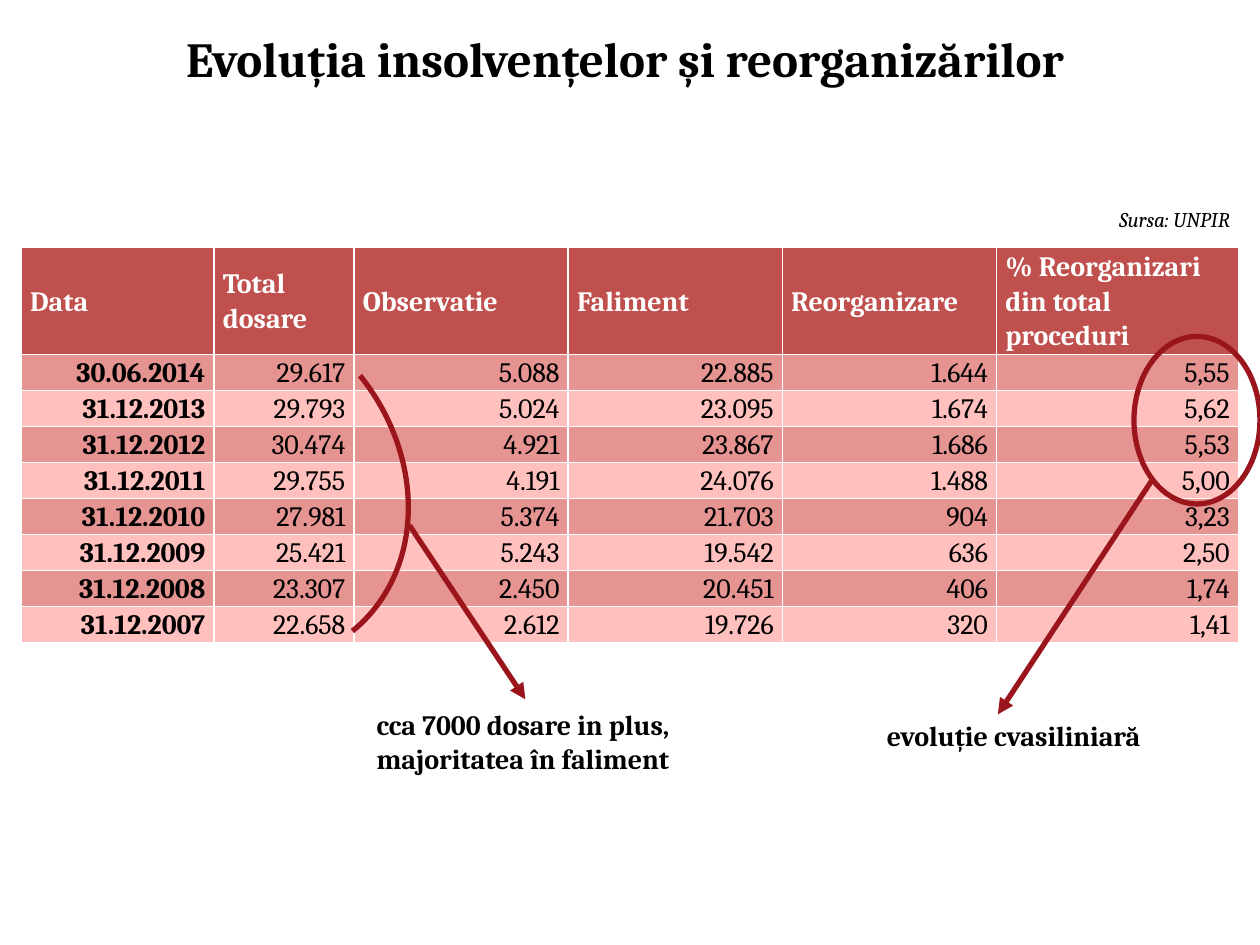
import pptx
import pptx.dml.color
import pptx.enum.shapes
import pptx.enum.text
import pptx.oxml
import pptx.oxml.ns
import pptx.util

COLORS = {
    "text": "000000",
    "white": "FFFFFF",
    "header": "C0504D",
    "dark row": "E59491",
    "light row": "FFC0BE",
    "mark": "9B151C",
}
ALIGN = pptx.enum.text.PP_ALIGN
SHAPE = pptx.enum.shapes.MSO_SHAPE
RGB = {name: pptx.dml.color.RGBColor.from_string(value) for name, value in COLORS.items()}

deck = pptx.Presentation()
deck.slide_width = pptx.util.Inches(10)
deck.slide_height = pptx.util.Inches(7.5)
page = deck.slides.add_slide(deck.slide_layouts[5])

# The page is a grid of 100 columns by 75 rows.
COLUMN = deck.slide_width // 100
ROW = deck.slide_height // 75


def grid(left, top, width, height):
    return [round(length) for length in (left * COLUMN, top * ROW, width * COLUMN, height * ROW)]


def write(frame, text, size, color="text", align=ALIGN.LEFT, bold=True, italic=False):
    frame.text = text
    frame.word_wrap = True
    for para in frame.paragraphs:
        para.alignment = align
        for span in para.runs:
            span.font.name = "Cambria"
            span.font.size = pptx.util.Pt(size)
            span.font.bold = bold
            span.font.italic = italic
            span.font.color.rgb = RGB[color]


# Title and source
title = page.shapes.title
title.left, title.top, title.width, title.height = grid(1.7, 1.8, 95.8, 5.7)
write(title.text_frame, "Evoluția insolvențelor și reorganizărilor", 28, align=ALIGN.CENTER)
title.text_frame.auto_size = pptx.enum.text.MSO_AUTO_SIZE.NONE
title.text_frame.vertical_anchor = pptx.enum.text.MSO_ANCHOR.TOP

source = page.shapes.add_textbox(*grid(84.4, 15.9, 14.2, 3))
write(source.text_frame, "Sursa: UNPIR", 12, align=ALIGN.RIGHT, bold=False, italic=True)

# Table
records = [
    ["Data", "Total dosare", "Observatie", "Faliment", "Reorganizare",
     "% Reorganizari din total proceduri"],
    ["30.06.2014", "29.617", "5.088", "22.885", "1.644", "5,55"],
    ["31.12.2013", "29.793", "5.024", "23.095", "1.674", "5,62"],
    ["31.12.2012", "30.474", "4.921", "23.867", "1.686", "5,53"],
    ["31.12.2011", "29.755", "4.191", "24.076", "1.488", "5,00"],
    ["31.12.2010", "27.981", "5.374", "21.703", "904", "3,23"],
    ["31.12.2009", "25.421", "5.243", "19.542", "636", "2,50"],
    ["31.12.2008", "23.307", "2.450", "20.451", "406", "1,74"],
    ["31.12.2007", "22.658", "2.612", "19.726", "320", "1,41"],
]
table = page.shapes.add_table(len(records), len(records[0]), *grid(1.7, 19.6, 96.6, 31.4)).table
for column, width in zip(table.columns, [15.3, 11.1, 17, 17, 17, 19.2]):
    column.width = round(width * COLUMN)

for row_index, record in enumerate(records):
    is_header = row_index == 0
    table.rows[row_index].height = round((8.5 if is_header else 2.85) * ROW)
    fill = "header" if is_header else "dark row" if row_index % 2 else "light row"
    for column_index, text in enumerate(record):
        cell = table.cell(row_index, column_index)
        write(cell.text_frame, text, 16, "white" if is_header else "text",
              ALIGN.LEFT if is_header else ALIGN.RIGHT, is_header or column_index == 0)
        cell.text_frame.paragraphs[0].line_spacing = 1.07
        cell.vertical_anchor = pptx.enum.text.MSO_ANCHOR.MIDDLE
        cell.margin_left = cell.margin_right = round(0.7 * COLUMN)
        cell.margin_top = cell.margin_bottom = 0
        properties = cell._tc.get_or_add_tcPr()
        for side in ("lnL", "lnR", "lnT", "lnB"):
            properties.append(pptx.oxml.parse_xml(
                f'<a:{side} {pptx.oxml.ns.nsdecls("a")} w="12700"><a:solidFill>'
                f'<a:srgbClr val="{COLORS["white"]}"/></a:solidFill></a:{side}>'))
        cell.fill.solid()
        cell.fill.fore_color.rgb = RGB[fill]

# Marks around the figures
marks = [
    (SHAPE.OVAL, (90, 26.7, 10, 13.3), 0),
    (SHAPE.ARC, (2.9, 24.9, 30.8, 26.4), 51.1),
]
for kind, place, rotation in marks:
    mark = page.shapes.add_shape(kind, *grid(*place))
    mark.rotation = rotation
    mark.shadow.inherit = False
    mark.fill.background()
    mark.line.color.rgb = RGB["mark"]
    mark.line.width = pptx.util.Pt(3)

# Arrows from the marks to their comments
for ends in [(91.5, 38, 79.2, 56.7), (32.5, 41.7, 41.7, 55.5)]:
    arrow = page.shapes.add_connector(pptx.enum.shapes.MSO_CONNECTOR.STRAIGHT, *grid(*ends))
    arrow.line.color.rgb = RGB["mark"]
    arrow.line.width = pptx.util.Pt(3)
    arrow.line._get_or_add_ln().append(pptx.oxml.parse_xml(
        f'<a:tailEnd {pptx.oxml.ns.nsdecls("a")} type="triangle"/>'))
    arrow._element.spPr.append(pptx.oxml.parse_xml(
        f'<a:effectLst {pptx.oxml.ns.nsdecls("a")}/>'))

comments = [
    ("evoluție cvasiliniară", (69.4, 56.5, 25.3, 3.7)),
    ("cca 7000 dosare in plus,\nmajoritatea în faliment", (28.9, 55.7, 29.9, 6.4)),
]
for text, place in comments:
    box = page.shapes.add_textbox(*grid(*place))
    write(box.text_frame, text, 16)

deck.save("out.pptx")
